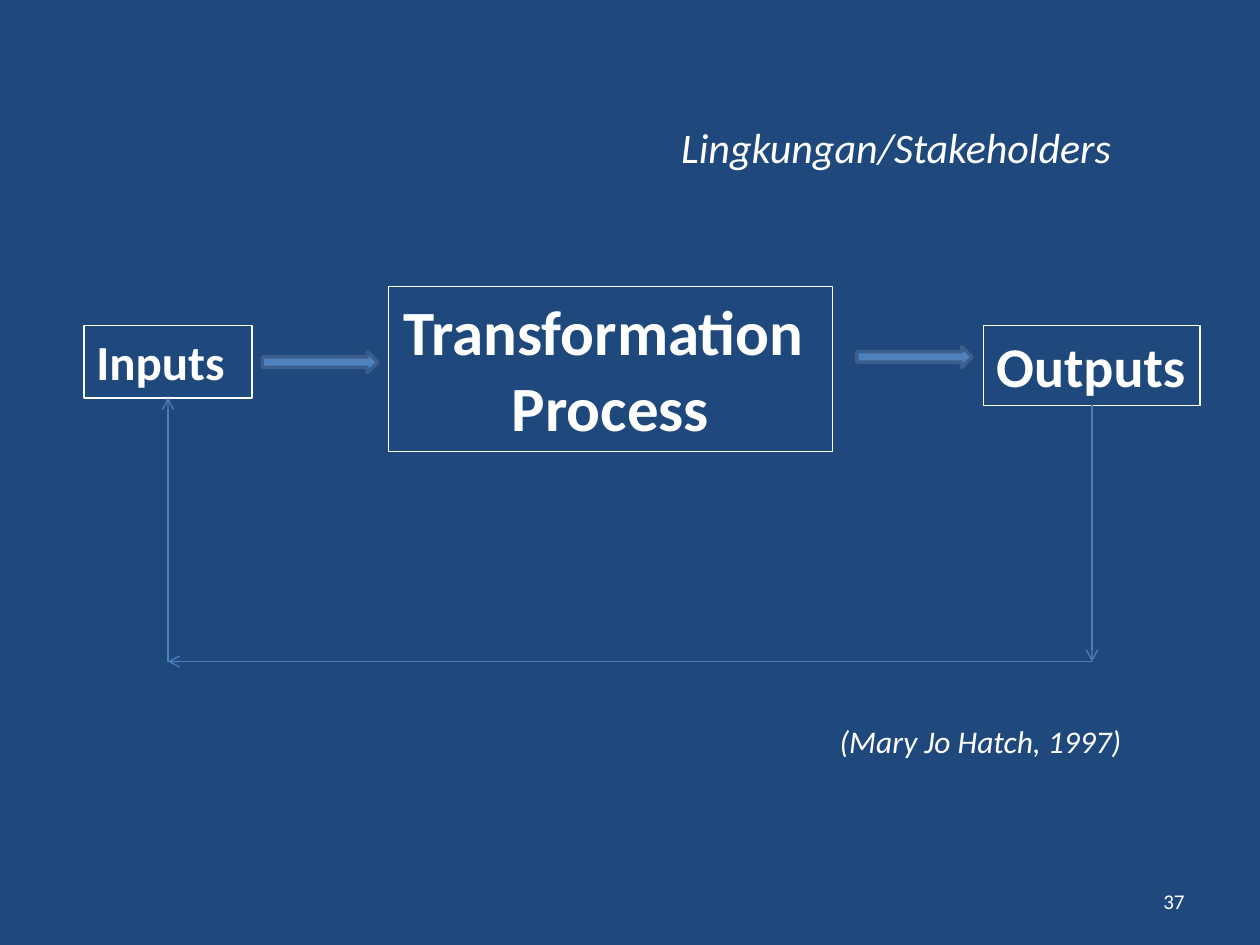
from lxml.etree import SubElement
from pptx import Presentation
from pptx.dml.color import RGBColor
from pptx.enum.shapes import MSO_CONNECTOR, MSO_SHAPE
from pptx.enum.text import MSO_ANCHOR, PP_ALIGN
from pptx.oxml.ns import qn
from pptx.util import Inches, Pt

CELL = 1 / 12  # grid of 120 columns by 90 rows
BOTTOM = 2


def color(hex_value):
    return RGBColor.from_string(hex_value)


def grid(*cells):
    return [Inches(cell * CELL) for cell in cells]


class Diagram:
    font = "Calibri"
    background, text_color = "1F497D", "FFFFFF"
    arrow_fill, arrow_edge, feedback_color = "4F81BD", "3A5F8C", "4B7EBC"

    def __init__(self, slide):
        self.slide = slide
        slide.background.fill.solid()
        slide.background.fill.fore_color.rgb = color(self.background)

    def set_text(self, shape, text, size, align, anchor=MSO_ANCHOR.TOP, bold=False, italic=False):
        frame = shape.text_frame
        frame.word_wrap = True
        frame.vertical_anchor = anchor
        frame.text = text
        for paragraph in frame.paragraphs:
            paragraph.alignment = align
            font = paragraph.font
            font.name, font.size = self.font, Pt(size)
            font.bold, font.italic = bold, italic
            font.color.rgb = color(self.text_color)

    def label(self, area, text, size, **style):
        box = self.slide.shapes.add_textbox(*grid(*area))
        self.set_text(box, text, size, PP_ALIGN.RIGHT, **style)

    def stage(self, area, text, size, align=PP_ALIGN.LEFT):
        box = self.slide.shapes.add_shape(MSO_SHAPE.RECTANGLE, *grid(*area))
        box.shadow.inherit = False
        box.fill.background()
        box.line.color.rgb = color(self.text_color)
        box.line.width = Pt(0.75)
        self.set_text(box, text, size, align, bold=True)
        return box

    def flow_arrow(self, left, top):
        arrow = self.slide.shapes.add_shape(MSO_SHAPE.RIGHT_ARROW, *grid(left, top, 11, 2))
        arrow.shadow.inherit = False
        arrow.fill.solid()
        arrow.fill.fore_color.rgb = color(self.arrow_fill)
        arrow.line.color.rgb = color(self.arrow_edge)
        arrow.line.width = Pt(2)

    def feedback(self, start, end):
        connector = self.slide.shapes.add_connector(MSO_CONNECTOR.STRAIGHT, *grid(*start, *end))
        connector.line.color.rgb = color(self.feedback_color)
        connector.line.width = Pt(0.75)
        SubElement(connector.get_or_add_ln(), qn("a:tailEnd"), type="arrow")
        SubElement(connector._element.spPr, qn("a:effectLst"))
        return connector


def main():
    presentation = Presentation()
    presentation.slide_width, presentation.slide_height = grid(120, 90)
    diagram = Diagram(presentation.slides.add_slide(presentation.slide_layouts[6]))

    # Environment, source and page number
    diagram.label((22, 11, 85, 6), "Lingkungan/Stakeholders", 24, italic=True)
    diagram.label((77.8, 68.2, 30.2, 4.8), "(Mary Jo Hatch, 1997)", 18, italic=True)
    diagram.label((86, 83.4, 28, 4.8), "37", 12, anchor=MSO_ANCHOR.MIDDLE)

    # Stages of the process
    inputs = diagram.stage((8, 31, 16, 6.9), "Inputs", 28)
    diagram.stage((37, 27.3, 42.3, 15.7), "Transformation \nProcess", 36, PP_ALIGN.CENTER)
    outputs = diagram.stage((93.7, 31, 20.6, 7.6), "Outputs", 32)
    diagram.flow_arrow(25, 33.5)
    diagram.flow_arrow(81.6, 33)

    # Feedback loop from outputs back to inputs
    right_corner, left_corner = (104, 63), (16, 63)
    diagram.feedback((104, 38.6), right_corner).begin_connect(outputs, BOTTOM)
    diagram.feedback(right_corner, left_corner)
    diagram.feedback(left_corner, (16, 37.9)).end_connect(inputs, BOTTOM)

    presentation.save("out.pptx")


if __name__ == "__main__":
    main()
